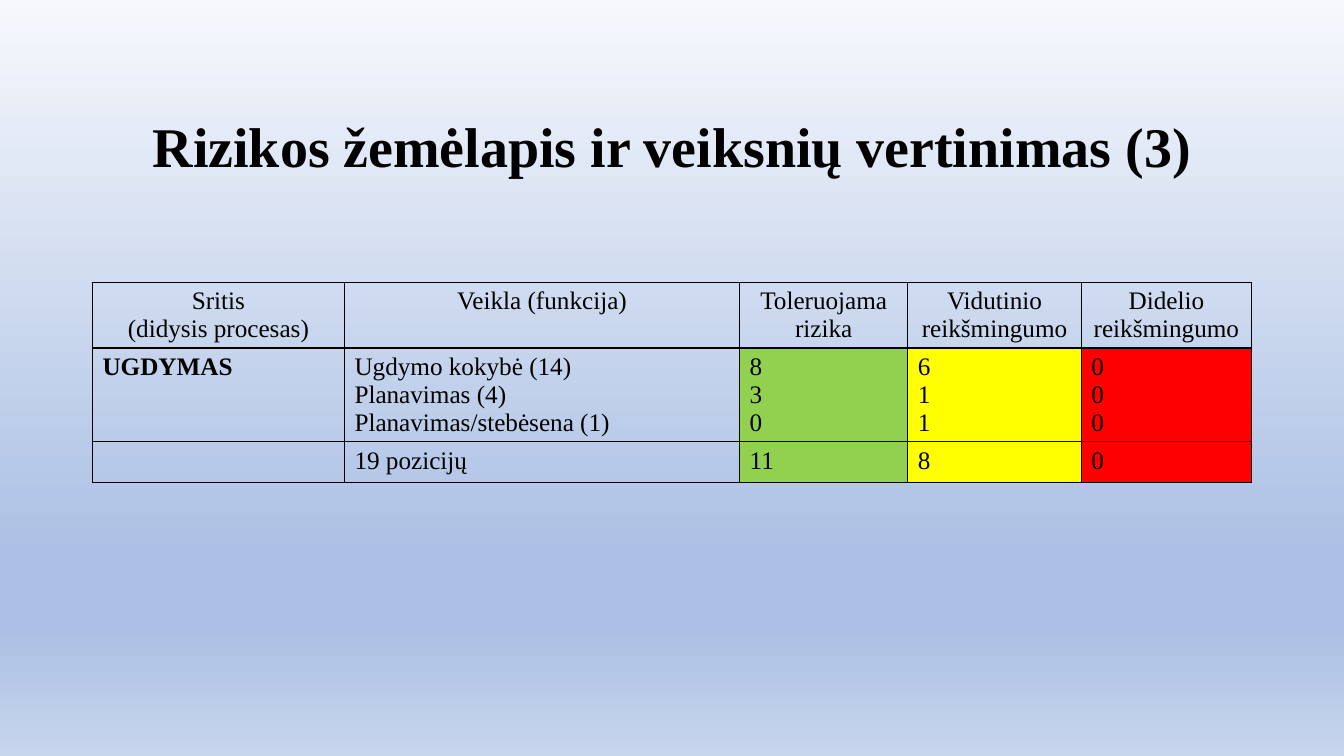
from copy import deepcopy
from dataclasses import dataclass

from lxml.etree import SubElement
from pptx import Presentation
from pptx.dml.color import RGBColor
from pptx.enum.text import MSO_ANCHOR, MSO_AUTO_SIZE, PP_ALIGN
from pptx.oxml.ns import qn
from pptx.slide import Slide
from pptx.table import _Cell
from pptx.util import Cm, Pt

BLACK = RGBColor(0x00, 0x00, 0x00)
GREEN = RGBColor(0x92, 0xD0, 0x50)
YELLOW = RGBColor(0xFF, 0xFF, 0x00)
RED = RGBColor(0xFF, 0x00, 0x00)
MIST = RGBColor(0xF6, 0xF8, 0xFC)
BLUE = RGBColor(0xAB, 0xC0, 0xE4)
PALE_BLUE = RGBColor(0xC7, 0xD5, 0xED)

STOPS = [(0, MIST), (0.74, BLUE), (0.83, BLUE), (1, PALE_BLUE)]
FONT = {"name": "Times New Roman", "size": Pt(18), "bold": False}
TITLE_FONT = FONT | {"size": Pt(40), "bold": True}
LEFT, WIDTH = Cm(2.33), Cm(29.21)
ROW_HEIGHT = Cm(1.03)


@dataclass
class Column:
    width: float
    texts: tuple[str, str, str]
    fill: RGBColor | None = None
    bold: bool = False


COLUMNS = [
    Column(6.35, ("Sritis\n(didysis procesas)", "UGDYMAS", ""), bold=True),
    Column(9.96, ("Veikla (funkcija)",
                  "Ugdymo kokybė (14)\nPlanavimas (4)\nPlanavimas/stebėsena (1)",
                  "19 pozicijų")),
    Column(4.24, ("Toleruojama rizika", "8\n3\n0", "11"), GREEN),
    Column(4.37, ("Vidutinio reikšmingumo", "6\n1\n1", "8"), YELLOW),
    Column(4.29, ("Didelio reikšmingumo", "0\n0\n0", "0"), RED),
]


def format_text(tf, font: dict, align: PP_ALIGN) -> None:
    for p in tf.paragraphs:
        p.alignment = align
        for target in [p, *p.runs]:
            for name, value in font.items():
                setattr(target.font, name, value)
            target.font.color.rgb = BLACK


def set_background(s: Slide) -> None:
    fill = s.background.fill
    fill.gradient()
    fill.gradient_angle = 270
    stop_list = s.element.find(".//" + qn("a:gsLst"))
    for _ in range(len(STOPS) - len(stop_list)):
        stop_list.append(deepcopy(stop_list[0]))
    for stop, (position, color) in zip(fill.gradient_stops, STOPS):
        stop.position = position
        stop.color.rgb = color


def add_borders(cell: _Cell) -> None:
    tcPr = cell._tc.get_or_add_tcPr()
    for i, side in enumerate(("lnL", "lnR", "lnT", "lnB")):
        line = SubElement(tcPr, qn(f"a:{side}"), w=str(Pt(1)))
        solid = SubElement(line, qn("a:solidFill"))
        SubElement(solid, qn("a:srgbClr"), val=str(BLACK))
        tcPr.insert(i, line)


def fill_cell(cell: _Cell, column: Column, row: int) -> None:
    header = row == 0
    cell.text = column.texts[row]
    font = FONT | {"bold": column.bold and not header}
    format_text(cell.text_frame, font, PP_ALIGN.CENTER if header else PP_ALIGN.LEFT)
    if column.fill is None or header:
        cell.fill.background()
    else:
        cell.fill.solid()
        cell.fill.fore_color.rgb = column.fill
    add_borders(cell)


def add_title(s: Slide) -> None:
    sp = s.shapes.title
    sp.left, sp.top, sp.width, sp.height = LEFT, Cm(1.93), WIDTH, Cm(3.68)
    tf = sp.text_frame
    tf.text = "Rizikos žemėlapis ir veiksnių vertinimas (3)"
    tf.auto_size = MSO_AUTO_SIZE.NONE
    tf.vertical_anchor = MSO_ANCHOR.MIDDLE
    tf.paragraphs[0].line_spacing = 0.9
    format_text(tf, TITLE_FONT, PP_ALIGN.CENTER)


def add_risk_table(s: Slide) -> None:
    rows = len(COLUMNS[0].texts)
    table = s.shapes.add_table(rows, len(COLUMNS), LEFT, Cm(7.11), WIDTH,
                               ROW_HEIGHT * rows).table
    table.first_row = table.horz_banding = False
    for i, column in enumerate(COLUMNS):
        table.columns[i].width = Cm(column.width)
        for row in range(rows):
            fill_cell(table.cell(row, i), column, row)


def main() -> None:
    prs = Presentation()
    prs.slide_width, prs.slide_height = Cm(33.87), Cm(19.05)
    s = prs.slides.add_slide(prs.slide_layouts[5])
    set_background(s)
    add_title(s)
    add_risk_table(s)
    prs.save("out.pptx")


if __name__ == "__main__":
    main()
